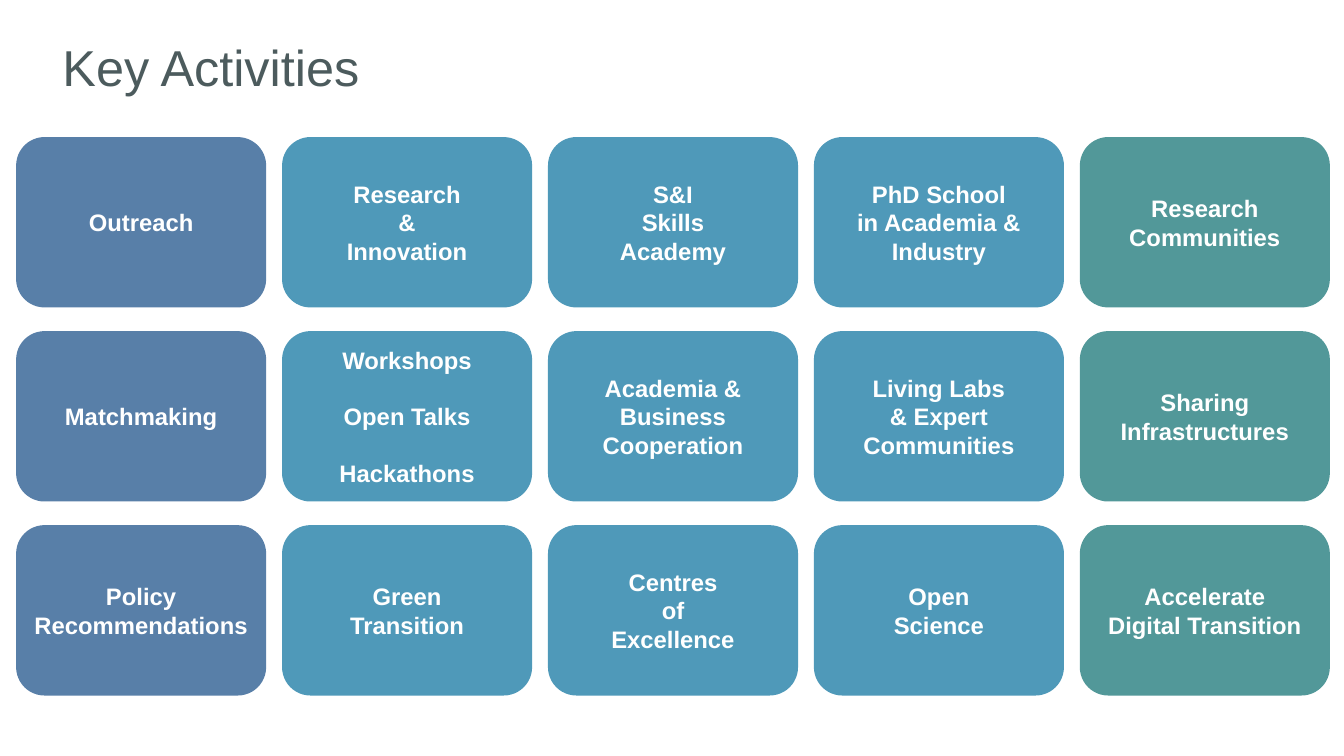
"""Build the Key Activities slide: a grid of rounded cards in three coloured groups."""
from dataclasses import dataclass

from pptx import Presentation
from pptx.dml.color import RGBColor
from pptx.enum.shapes import MSO_SHAPE
from pptx.enum.text import MSO_ANCHOR, PP_ALIGN
from pptx.shapes.group import GroupShape
from pptx.slide import Slide
from pptx.util import Inches, Pt

FONT = "Arial"
CARD_WIDTH, CARD_HEIGHT = 2.48, 1.69
FIRST_LEFT, LAST_LEFT = 0.16, 10.71
FIRST_TOP, LAST_TOP = 1.36, 5.21
COLUMN_STEP = (LAST_LEFT - FIRST_LEFT) / 4
ROW_STEP = (LAST_TOP - FIRST_TOP) / 2


@dataclass(frozen=True)
class Card:
    column: int
    row: int
    text: str
    gap: float = 0


@dataclass(frozen=True)
class CardGroup:
    fill: str
    cards: list[Card]


CARD_GROUPS = [
    CardGroup("4F99B9", [
        Card(1, 0, "Research\n&\nInnovation"),
        Card(2, 0, "S&I\nSkills\nAcademy"),
        Card(3, 0, "PhD School\nin Academia &\nIndustry"),
        Card(1, 1, "Workshops\nOpen Talks\nHackathons", gap=20),
        Card(2, 1, "Academia &\nBusiness Cooperation"),
        Card(3, 1, "Living Labs\v& Expert Communities"),
        Card(1, 2, "Green\nTransition"),
        Card(2, 2, "Centres\nof\nExcellence"),
        Card(3, 2, "Open\nScience"),
    ]),
    CardGroup("587FA8", [
        Card(0, 0, "Outreach"),
        Card(0, 1, "Matchmaking"),
        Card(0, 2, "Policy Recommendations"),
    ]),
    CardGroup("529899", [
        Card(4, 0, "Research Communities"),
        Card(4, 1, "Sharing Infrastructures"),
        Card(4, 2, "Accelerate\vDigital Transition"),
    ]),
]


def color(value: str) -> RGBColor:
    """Turn a hex string into a colour."""
    return RGBColor.from_string(value)


def add_title(slide: Slide, text: str) -> None:
    """Add the slide heading."""
    title = slide.shapes.add_textbox(Inches(0.62), Inches(0.43), Inches(12.54), Inches(0.91))
    frame = title.text_frame
    frame.word_wrap = True
    frame.margin_left = frame.margin_right = frame.margin_top = frame.margin_bottom = 0
    frame.text = text
    paragraph = frame.paragraphs[0]
    paragraph.line_spacing = 0.9
    font = paragraph.runs[0].font
    font.name = FONT
    font.size = Pt(36)
    font.color.rgb = color("4C5B5D")


def add_card(group: GroupShape, card: Card, fill: str) -> None:
    """Add one rounded card at its place in the grid."""
    shape = group.shapes.add_shape(
        MSO_SHAPE.ROUNDED_RECTANGLE,
        Inches(FIRST_LEFT + card.column * COLUMN_STEP),
        Inches(FIRST_TOP + card.row * ROW_STEP),
        Inches(CARD_WIDTH),
        Inches(CARD_HEIGHT),
    )
    shape.shadow.inherit = False
    shape.fill.solid()
    shape.fill.fore_color.rgb = color(fill)
    shape.line.fill.background()
    frame = shape.text_frame
    frame.word_wrap = True
    frame.vertical_anchor = MSO_ANCHOR.MIDDLE
    frame.margin_left = frame.margin_right = Inches(0.05)
    frame.text = card.text
    for index, paragraph in enumerate(frame.paragraphs):
        paragraph.alignment = PP_ALIGN.CENTER
        if index and card.gap:
            paragraph.space_before = Pt(card.gap)
        for run in paragraph.runs:
            run.font.name = FONT
            run.font.size = Pt(17)
            run.font.bold = True
            run.font.color.rgb = color("FFFFFF")


def main() -> None:
    """Create and save the presentation."""
    presentation = Presentation()
    presentation.slide_width = Inches(13.33)
    presentation.slide_height = Inches(7.5)
    slide = presentation.slides.add_slide(presentation.slide_layouts[6])
    add_title(slide, "Key Activities")
    for card_group in CARD_GROUPS:
        group = slide.shapes.add_group_shape()
        for card in card_group.cards:
            add_card(group, card, card_group.fill)
    presentation.save("out.pptx")


if __name__ == "__main__":
    main()
